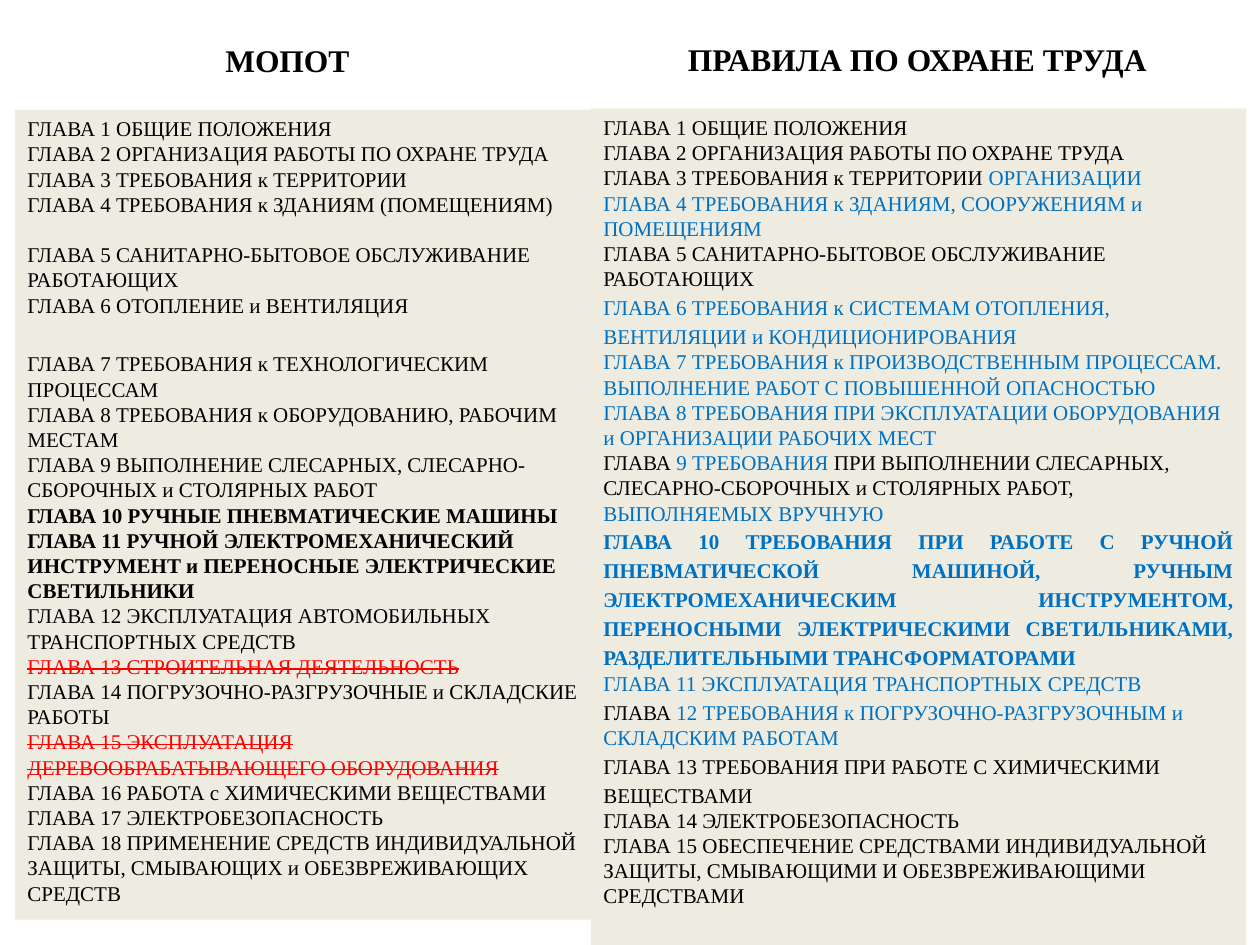
from typing import NamedTuple

from pptx import Presentation, util as u
from pptx.dml import color
from pptx.enum import shapes, text

FONT = "Times New Roman"
BLACK, BLUE, RED, BEIGE = "000000", "0070C0", "FF0000", "EEECE1"


class Run(NamedTuple):
    text: str
    color: str = BLACK
    bold: bool = False
    strike: bool = False


class Chapter(NamedTuple):
    runs: tuple[Run, ...]
    space_before: float = 0
    line_spacing: float | None = None
    justified: bool = False


class Box(NamedTuple):
    left: float
    top: float
    width: float
    height: float


def chapter(words: str, color: str = BLACK, bold: bool = False,
            strike: bool = False, **layout) -> Chapter:
    """A chapter heading in one format."""
    return Chapter((Run(words, color, bold, strike),), **layout)


def mixed(*runs: Run, **layout) -> Chapter:
    """A chapter heading whose changed words have another colour."""
    return Chapter(runs, **layout)


def rgb(value: str) -> color.RGBColor:
    return color.RGBColor.from_string(value)


def add_text(paragraph, words: str, *, size: float = 12, color: str = BLACK,
             bold: bool = False, strike: bool = False) -> None:
    run = paragraph.add_run()
    run.text = words
    font = run.font
    font.name, font.size, font.bold = FONT, u.Pt(size), bold
    font.color.rgb = rgb(color)
    if strike:
        run._r.get_or_add_rPr().set("strike", "sngStrike")


def add_title(slide, box: Box, words: str):
    shape = slide.shapes.add_textbox(*map(u.Inches, box))
    shape.text_frame.word_wrap = False
    paragraph = shape.text_frame.paragraphs[0]
    add_text(paragraph, words, size=18, bold=True)
    return paragraph


def add_panel(slide, box: Box, chapters: list[Chapter]) -> None:
    shape = slide.shapes.add_shape(shapes.MSO_SHAPE.RECTANGLE, *map(u.Inches, box))
    shape.shadow.inherit = False
    shape.fill.solid()
    shape.fill.fore_color.rgb = rgb(BEIGE)
    shape.line.fill.background()
    frame = shape.text_frame
    frame.word_wrap = True
    frame.vertical_anchor = text.MSO_ANCHOR.TOP
    for index, item in enumerate(chapters):
        paragraph = frame.add_paragraph() if index else frame.paragraphs[0]
        paragraph.alignment = text.PP_ALIGN.JUSTIFY if item.justified else text.PP_ALIGN.LEFT
        paragraph.space_before = u.Pt(item.space_before)
        if item.line_spacing:
            paragraph.line_spacing = item.line_spacing
        for run in item.runs:
            add_text(paragraph, run.text, color=run.color, bold=run.bold, strike=run.strike)


# Chapters of the former rules; gaps keep them level with the new ones
OLD_CHAPTERS = [
    chapter("ГЛАВА 1 ОБЩИЕ ПОЛОЖЕНИЯ"),
    chapter("ГЛАВА 2 ОРГАНИЗАЦИЯ РАБОТЫ ПО ОХРАНЕ ТРУДА"),
    chapter("ГЛАВА 3 ТРЕБОВАНИЯ к ТЕРРИТОРИИ"),
    chapter("ГЛАВА 4 ТРЕБОВАНИЯ к ЗДАНИЯМ (ПОМЕЩЕНИЯМ)"),
    chapter("ГЛАВА 5 САНИТАРНО-БЫТОВОЕ ОБСЛУЖИВАНИЕ РАБОТАЮЩИХ", space_before=14.4),
    chapter("ГЛАВА 6 ОТОПЛЕНИЕ и ВЕНТИЛЯЦИЯ"),
    chapter("ГЛАВА 7 ТРЕБОВАНИЯ к ТЕХНОЛОГИЧЕСКИМ ПРОЦЕССАМ", space_before=19.2),
    chapter("ГЛАВА 8 ТРЕБОВАНИЯ к ОБОРУДОВАНИЮ, РАБОЧИМ МЕСТАМ"),
    chapter("ГЛАВА 9 ВЫПОЛНЕНИЕ СЛЕСАРНЫХ, СЛЕСАРНО-СБОРОЧНЫХ и СТОЛЯРНЫХ РАБОТ"),
    chapter("ГЛАВА 10 РУЧНЫЕ ПНЕВМАТИЧЕСКИЕ МАШИНЫ", bold=True),
    chapter("ГЛАВА 11 РУЧНОЙ ЭЛЕКТРОМЕХАНИЧЕСКИЙ ИНСТРУМЕНТ и ПЕРЕНОСНЫЕ "
            "ЭЛЕКТРИЧЕСКИЕ СВЕТИЛЬНИКИ", bold=True),
    chapter("ГЛАВА 12 ЭКСПЛУАТАЦИЯ АВТОМОБИЛЬНЫХ ТРАНСПОРТНЫХ СРЕДСТВ"),
    chapter("ГЛАВА 13 СТРОИТЕЛЬНАЯ ДЕЯТЕЛЬНОСТЬ", RED, strike=True),
    chapter("ГЛАВА 14 ПОГРУЗОЧНО-РАЗГРУЗОЧНЫЕ и СКЛАДСКИЕ РАБОТЫ"),
    chapter("ГЛАВА 15 ЭКСПЛУАТАЦИЯ ДЕРЕВООБРАБАТЫВАЮЩЕГО ОБОРУДОВАНИЯ", RED, strike=True),
    chapter("ГЛАВА 16 РАБОТА с ХИМИЧЕСКИМИ ВЕЩЕСТВАМИ"),
    chapter("ГЛАВА 17 ЭЛЕКТРОБЕЗОПАСНОСТЬ"),
    chapter("ГЛАВА 18 ПРИМЕНЕНИЕ СРЕДСТВ ИНДИВИДУАЛЬНОЙ ЗАЩИТЫ, СМЫВАЮЩИХ "
            "и ОБЕЗВРЕЖИВАЮЩИХ СРЕДСТВ"),
]

# Chapters of the new rules; changes are blue
NEW_CHAPTERS = [
    chapter("ГЛАВА 1 ОБЩИЕ ПОЛОЖЕНИЯ"),
    chapter("ГЛАВА 2 ОРГАНИЗАЦИЯ РАБОТЫ ПО ОХРАНЕ ТРУДА"),
    mixed(Run("ГЛАВА 3 ТРЕБОВАНИЯ к ТЕРРИТОРИИ "), Run("ОРГАНИЗАЦИИ", BLUE)),
    chapter("ГЛАВА 4 ТРЕБОВАНИЯ к ЗДАНИЯМ, СООРУЖЕНИЯМ и ПОМЕЩЕНИЯМ", BLUE),
    chapter("ГЛАВА 5 САНИТАРНО-БЫТОВОЕ ОБСЛУЖИВАНИЕ РАБОТАЮЩИХ"),
    chapter("ГЛАВА 6 ТРЕБОВАНИЯ к СИСТЕМАМ ОТОПЛЕНИЯ, ВЕНТИЛЯЦИИ "
            "и КОНДИЦИОНИРОВАНИЯ", BLUE, line_spacing=1.15),
    chapter("ГЛАВА 7 ТРЕБОВАНИЯ к ПРОИЗВОДСТВЕННЫМ ПРОЦЕССАМ. ВЫПОЛНЕНИЕ РАБОТ "
            "С ПОВЫШЕННОЙ ОПАСНОСТЬЮ", BLUE),
    chapter("ГЛАВА 8 ТРЕБОВАНИЯ ПРИ ЭКСПЛУАТАЦИИ ОБОРУДОВАНИЯ "
            "и ОРГАНИЗАЦИИ РАБОЧИХ МЕСТ", BLUE),
    mixed(Run("ГЛАВА "), Run("9 ТРЕБОВАНИЯ ", BLUE),
          Run("ПРИ ВЫПОЛНЕНИИ СЛЕСАРНЫХ, СЛЕСАРНО-СБОРОЧНЫХ и СТОЛЯРНЫХ РАБОТ, "),
          Run("ВЫПОЛНЯЕМЫХ ВРУЧНУЮ", BLUE)),
    chapter("ГЛАВА 10 ТРЕБОВАНИЯ ПРИ РАБОТЕ С РУЧНОЙ ПНЕВМАТИЧЕСКОЙ МАШИНОЙ, "
            "РУЧНЫМ ЭЛЕКТРОМЕХАНИЧЕСКИМ ИНСТРУМЕНТОМ, ПЕРЕНОСНЫМИ ЭЛЕКТРИЧЕСКИМИ "
            "СВЕТИЛЬНИКАМИ, РАЗДЕЛИТЕЛЬНЫМИ ТРАНСФОРМАТОРАМИ",
            BLUE, bold=True, line_spacing=1.15, justified=True),
    chapter("ГЛАВА 11 ЭКСПЛУАТАЦИЯ ТРАНСПОРТНЫХ СРЕДСТВ", BLUE),
    mixed(Run("ГЛАВА "), Run("12 ТРЕБОВАНИЯ к ПОГРУЗОЧНО-РАЗГРУЗОЧНЫМ и ", BLUE),
          line_spacing=1.15),
    chapter("СКЛАДСКИМ РАБОТАМ", BLUE),
    chapter("ГЛАВА 13 ТРЕБОВАНИЯ ПРИ РАБОТЕ С ХИМИЧЕСКИМИ ВЕЩЕСТВАМИ", line_spacing=1.15),
    chapter("ГЛАВА 14 ЭЛЕКТРОБЕЗОПАСНОСТЬ"),
    chapter("ГЛАВА 15 ОБЕСПЕЧЕНИЕ СРЕДСТВАМИ ИНДИВИДУАЛЬНОЙ ЗАЩИТЫ, СМЫВАЮЩИМИ "
            "И ОБЕЗВРЕЖИВАЮЩИМИ СРЕДСТВАМИ"),
]


def main() -> None:
    presentation = Presentation()
    presentation.slide_width, presentation.slide_height = u.Inches(10), u.Inches(7.5)
    slide = presentation.slides.add_slide(presentation.slide_layouts[6])

    # Right title, with tight line spacing
    title = add_title(slide, Box(5.3, 0.37, 3.97, 0.31), " ПРАВИЛА ПО ОХРАНЕ ТРУДА")
    title.line_spacing = u.Pt(14)
    title.space_before = u.Pt(12)

    # Two panels of chapters
    add_panel(slide, Box(0.12, 0.87, 4.57, 6.43), OLD_CHAPTERS)
    add_panel(slide, Box(4.69, 0.86, 5.2, 6.84), NEW_CHAPTERS)

    # Left title
    add_title(slide, Box(1.69, 0.28, 1.2, 0.4), "МОПОТ")

    presentation.save("out.pptx")


if __name__ == "__main__":
    main()
